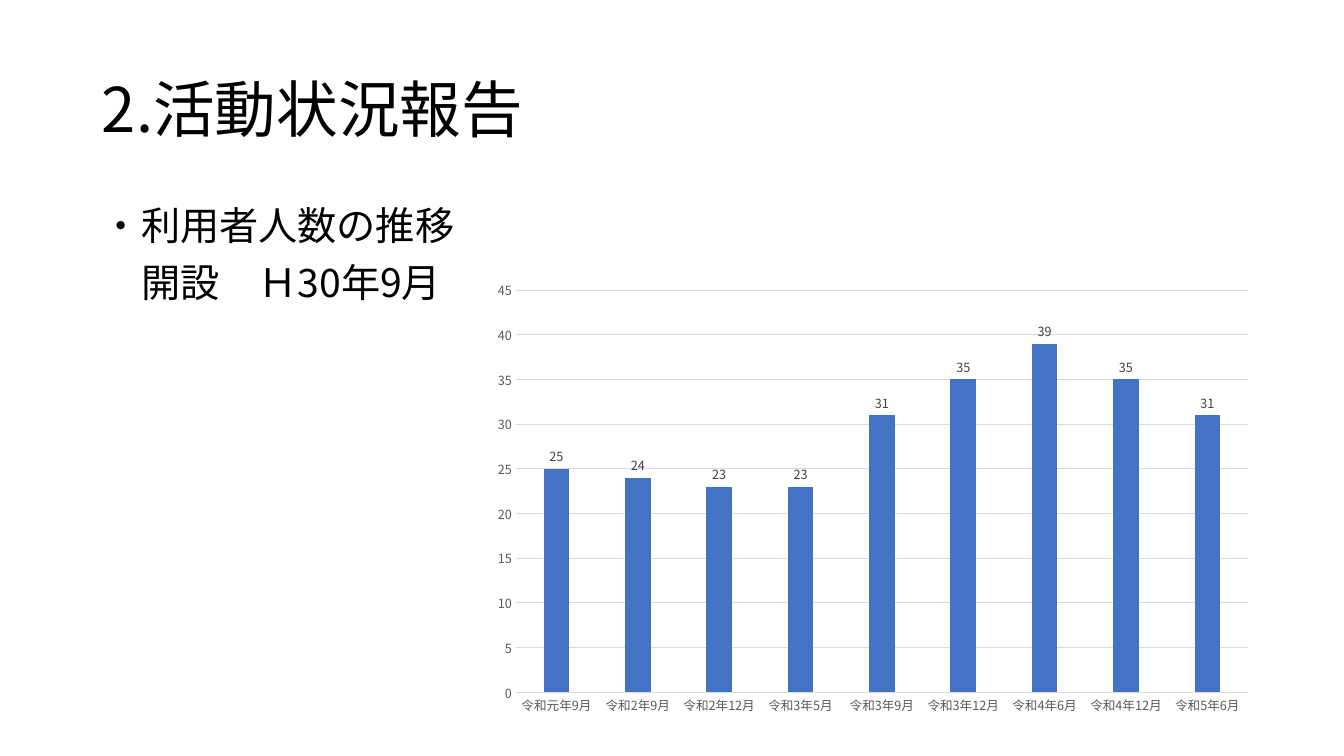
from lxml import etree
from pptx import Presentation
from pptx.chart.data import CategoryChartData
from pptx.dml.color import RGBColor
from pptx.enum.chart import XL_CHART_TYPE, XL_LABEL_POSITION, XL_TICK_MARK
from pptx.enum.text import MSO_ANCHOR
from pptx.oxml.ns import qn
from pptx.util import Pt

COLUMNS = XL_CHART_TYPE.COLUMN_CLUSTERED
OUTSIDE_END = XL_LABEL_POSITION.OUTSIDE_END
NO_TICK = XL_TICK_MARK.NONE
TOP, MIDDLE = MSO_ANCHOR.TOP, MSO_ANCHOR.MIDDLE

EMU_PER_PX = 914400 / 100.8
FONT = "Noto Sans CJK JP"
COLORS = {"text": "000000", "axis": "595959", "label": "404040",
          "grid": "D9D9D9", "bar": "4472C4"}

USERS = {"令和元年9月": 25, "令和2年9月": 24, "令和2年12月": 23,
         "令和3年5月": 23, "令和3年9月": 31, "令和3年12月": 35,
         "令和4年6月": 39, "令和4年12月": 35, "令和5年6月": 31}


def px(*lengths):
    """Turn pixel lengths into EMU."""
    return [round(length * EMU_PER_PX) for length in lengths]


def color(name):
    return RGBColor.from_string(COLORS[name])


class SlideBuilder:
    def __init__(self, page):
        self.page = page

    def style_font(self, font, size, color_name):
        font.size = Pt(size)
        font.name = FONT
        font.color.rgb = color(color_name)

    def text(self, frame, paragraphs, size, anchor=TOP, space_before=0):
        """Add a text box; each paragraph is a pair of left indent and runs."""
        box = self.page.shapes.add_textbox(*px(*frame)).text_frame
        box.word_wrap = True
        box.vertical_anchor = anchor
        for index, (indent, runs) in enumerate(paragraphs):
            para = box.paragraphs[0] if index == 0 else box.add_paragraph()
            para.line_spacing = 0.9
            para.space_before = Pt(space_before)
            para._p.get_or_add_pPr().set("marL", str(Pt(indent)))
            for words in runs:
                span = para.add_run()
                span.text = words
                self.style_font(span.font, size, "text")
                properties = span._r.get_or_add_rPr()
                properties.set("lang", "ja-JP")
                east_asian = etree.Element(qn("a:ea"), typeface=FONT)
                properties.find(qn("a:latin")).addnext(east_asian)

    def column_chart(self, frame, name, values, plot):
        data = CategoryChartData()
        data.categories = list(values)
        data.add_series(name, list(values.values()))
        chart = self.page.shapes.add_chart(COLUMNS, *px(*frame), data).chart
        chart.has_legend = False
        chart.has_title = False
        self.style_font(chart.font, 10, "text")
        self.style_axes(chart)
        self.style_bars(chart.plots[0])
        self.place_plot(chart, plot)

    def style_axes(self, chart):
        for axis in (chart.category_axis, chart.value_axis):
            axis.major_tick_mark = axis.minor_tick_mark = NO_TICK
            self.style_font(axis.tick_labels.font, 9, "axis")
        values = chart.value_axis
        values.minimum_scale, values.maximum_scale, values.major_unit = 0, 45, 5
        values.format.line.fill.background()
        for line in (chart.category_axis.format.line,
                     values.major_gridlines.format.line):
            line.color.rgb = color("grid")
            line.width = Pt(0.75)

    def style_bars(self, bars):
        bars.gap_width = 219
        bars.vary_by_categories = False
        fill = bars.series[0].format.fill
        fill.solid()
        fill.fore_color.rgb = color("bar")
        bars.has_data_labels = True
        labels = bars.data_labels
        labels.show_value = True
        labels.position = OUTSIDE_END
        self.style_font(labels.font, 9, "label")

    def place_plot(self, chart, plot):
        """Fix the inner plot area as fractions of the chart."""
        area = chart._chartSpace.chart.plotArea
        layout = area.find(qn("c:layout"))
        if layout is None:
            layout = etree.Element(qn("c:layout"))
            area.insert(0, layout)
        manual = etree.SubElement(layout, qn("c:manualLayout"))
        settings = [("layoutTarget", "inner"), ("xMode", "edge"), ("yMode", "edge")]
        for tag, value in settings + list(zip("xywh", plot)):
            etree.SubElement(manual, qn(f"c:{tag}"), val=str(value))


def main():
    deck = Presentation()
    deck.slide_width, deck.slide_height = px(1344, 756)
    slide = SlideBuilder(deck.slides.add_slide(deck.slide_layouts[6]))
    slide.text((92, 40, 1159, 146), [(0, ["2.", "活動状況報告"])], 44, MIDDLE)
    slide.text((92, 202, 1159, 480),
               [(0, ["・利用者人数の推移"]),
                (28, ["開設　Ｈ", "30", "年", "9", "月"])],
               28, space_before=10)
    slide.column_chart((476, 272, 796, 452), "利用者人数", USERS,
                       (0.05, 0.04, 0.92, 0.89))
    deck.save("out.pptx")


if __name__ == "__main__":
    main()
